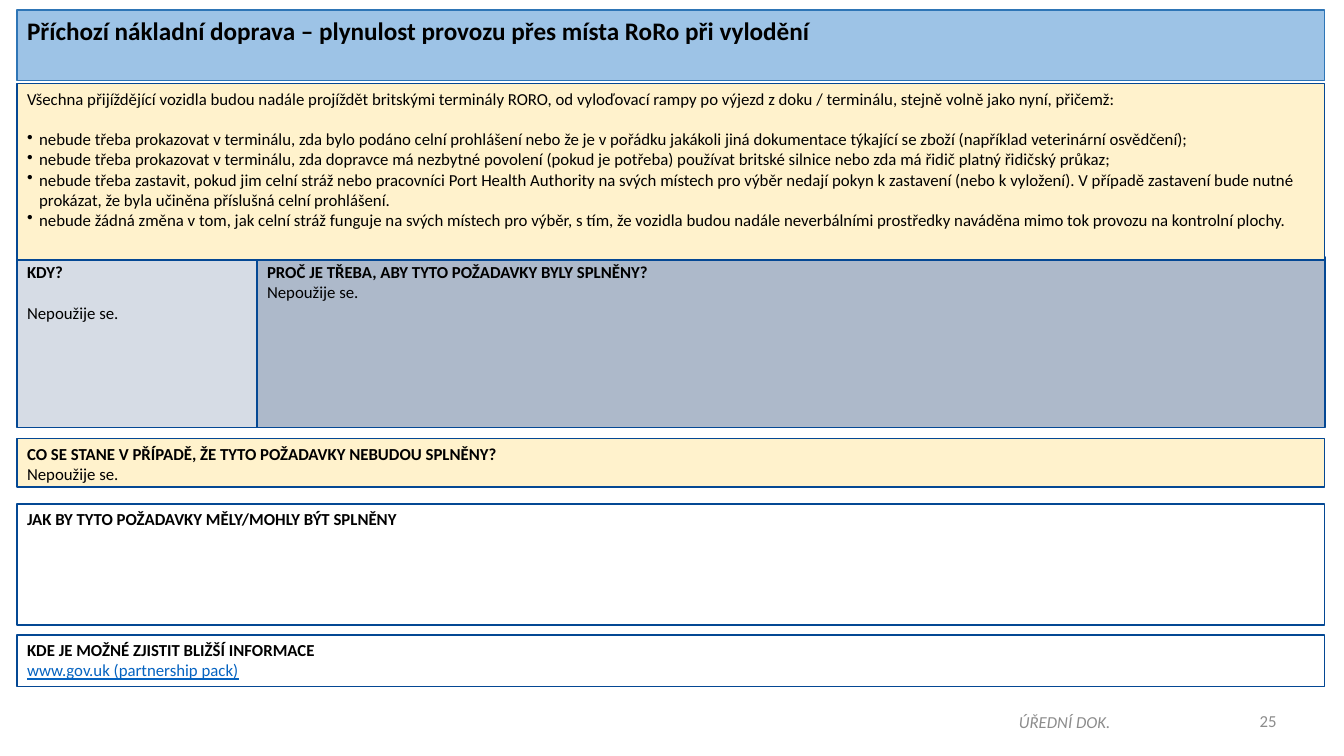
from lxml import etree
from pptx import Presentation
from pptx import util as u
from pptx.dml.color import RGBColor
from pptx.enum import shapes, text
from pptx.oxml.ns import qn

PX = 9144  # 100 px to the inch
LEFT, WIDTH, KEY_WIDTH = 17, 1297, 238
MARGIN = 10
BULLET_INDENT = 12
BLANK_LINE = u.Pt(14.4)

BLACK = RGBColor(0x00, 0x00, 0x00)
WHITE = RGBColor(0xFF, 0xFF, 0xFF)
GREY = RGBColor(0x8C, 0x8C, 0x8C)
LINK_BLUE = RGBColor(0x05, 0x63, 0xC1)
NAVY = RGBColor(0x04, 0x48, 0x94)
TITLE_EDGE = RGBColor(0x2E, 0x75, 0xB6)
TITLE_BLUE = RGBColor(0x9D, 0xC3, 0xE6)
CREAM = RGBColor(0xFF, 0xF2, 0xCC)
PALE_SLATE = RGBColor(0xD6, 0xDC, 0xE5)
SLATE = RGBColor(0xAD, 0xB9, 0xCA)

PLAIN = {"size": u.Pt(12), "name": "Calibri", "bold": False}
HEADING = {**PLAIN, "bold": True}
TITLE = {**HEADING, "size": u.Pt(18)}
LINK = {**PLAIN, "underline": True}
MARKING = {**PLAIN, "italic": True}

NOT_APPLICABLE = ("Nepoužije se.", PLAIN, {})
AFTER_GAP = {"space_before": BLANK_LINE}


def write(frame, paragraphs, color):
    """Fill a text frame with (wording, font format, paragraph format) entries."""
    frame.word_wrap = True
    for number, (wording, font_format, layout) in enumerate(paragraphs):
        paragraph = frame.paragraphs[0] if number == 0 else frame.add_paragraph()
        for key, value in {"alignment": text.PP_ALIGN.LEFT, **layout}.items():
            setattr(paragraph, key, value)
        run = paragraph.add_run()
        run.text = wording
        for key, value in font_format.items():
            setattr(run.font, key, value)
        run.font.color.rgb = LINK_BLUE if font_format is LINK else color


deck = Presentation()
deck.slide_width, deck.slide_height = 1333 * PX, 750 * PX
slide = deck.slides.add_slide(deck.slide_layouts[6])

requirements = [
    "nebude třeba prokazovat v terminálu, zda bylo podáno celní prohlášení nebo že je v pořádku jakákoli jiná dokumentace týkající se zboží (například veterinární osvědčení);",
    "nebude třeba prokazovat v terminálu, zda dopravce má nezbytné povolení (pokud je potřeba) používat britské silnice nebo zda má řidič platný řidičský průkaz;",
    "nebude třeba zastavit, pokud jim celní stráž nebo pracovníci Port Health Authority na svých místech pro výběr nedají pokyn k zastavení (nebo k vyložení). V případě zastavení bude nutné prokázat, že byla učiněna příslušná celní prohlášení.",
    "nebude žádná změna v tom, jak celní stráž funguje na svých místech pro výběr, s tím, že vozidla budou nadále neverbálními prostředky naváděna mimo tok provozu na kontrolní plochy.",
]
overview = [
    ("Všechna přijíždějící vozidla budou nadále projíždět britskými terminály RORO, od vyloďovací rampy po výjezd z doku / terminálu, stejně volně jako nyní, přičemž:", PLAIN, {}),
]
for number, requirement in enumerate(requirements):
    overview.append((requirement, PLAIN, AFTER_GAP if number == 0 else {}))

# left, top, width, height, fill, edge, paragraphs
panels = [
    (LEFT, 10, WIDTH, 70, TITLE_BLUE, TITLE_EDGE, [
        ("Příchozí nákladní doprava – plynulost provozu přes místa RoRo při vylodění", TITLE, {})]),
    (LEFT, 500, WIDTH, 120, WHITE, NAVY, [
        ("JAK BY TYTO POŽADAVKY MĚLY/MOHLY BÝT SPLNĚNY", HEADING, {})]),
    (LEFT, 435, WIDTH, 48, CREAM, NAVY, [
        ("CO SE STANE V PŘÍPADĚ, ŽE TYTO POŽADAVKY NEBUDOU SPLNĚNY?", HEADING, {}),
        NOT_APPLICABLE]),
    (LEFT, 255, KEY_WIDTH, 169, PALE_SLATE, NAVY, [
        ("KDY?", HEADING, {}),
        ("Nepoužije se.", PLAIN, AFTER_GAP)]),
    (LEFT + KEY_WIDTH, 255, WIDTH - KEY_WIDTH, 169, SLATE, NAVY, [
        ("PROČ JE TŘEBA, ABY TYTO POŽADAVKY BYLY SPLNĚNY?", HEADING, {}),
        NOT_APPLICABLE]),
    (LEFT, 630, WIDTH, 51, WHITE, NAVY, [
        ("KDE JE MOŽNÉ ZJISTIT BLIŽŠÍ INFORMACE", HEADING, {}),
        ("www.gov.uk (partnership pack)", LINK, {})]),
    (LEFT, 83, WIDTH, 175, CREAM, NAVY, overview),
]
for left, top, width, height, fill, edge, paragraphs in panels:
    panel = slide.shapes.add_shape(
        shapes.MSO_SHAPE.RECTANGLE, left * PX, top * PX, width * PX, height * PX)
    panel.shadow.inherit = False
    panel.fill.solid()
    panel.fill.fore_color.rgb = fill
    panel.line.color.rgb = edge
    panel.line.width = u.Pt(1)
    frame = panel.text_frame
    frame.vertical_anchor = text.MSO_ANCHOR.TOP
    frame.margin_left = frame.margin_right = MARGIN * PX
    frame.margin_top = frame.margin_bottom = MARGIN * PX // 2
    write(frame, paragraphs, BLACK)
    if paragraphs is overview:
        for paragraph in frame.paragraphs[1:]:
            properties = paragraph._p.get_or_add_pPr()
            properties.set("marL", str(BULLET_INDENT * PX))
            properties.set("indent", str(-BULLET_INDENT * PX))
            etree.SubElement(properties, qn("a:buChar")).set("char", "•")

footers = [
    (1210, 695, 66, "25", PLAIN, text.PP_ALIGN.RIGHT),
    (831, 696, 450, "ÚŘEDNÍ DOK.", MARKING, text.PP_ALIGN.CENTER),
]
for left, top, width, wording, font_format, alignment in footers:
    footer = slide.shapes.add_textbox(left * PX, top * PX, width * PX, 40 * PX)
    footer.text_frame.vertical_anchor = text.MSO_ANCHOR.MIDDLE
    write(footer.text_frame, [(wording, font_format, {"alignment": alignment})], GREY)

deck.save("out.pptx")
